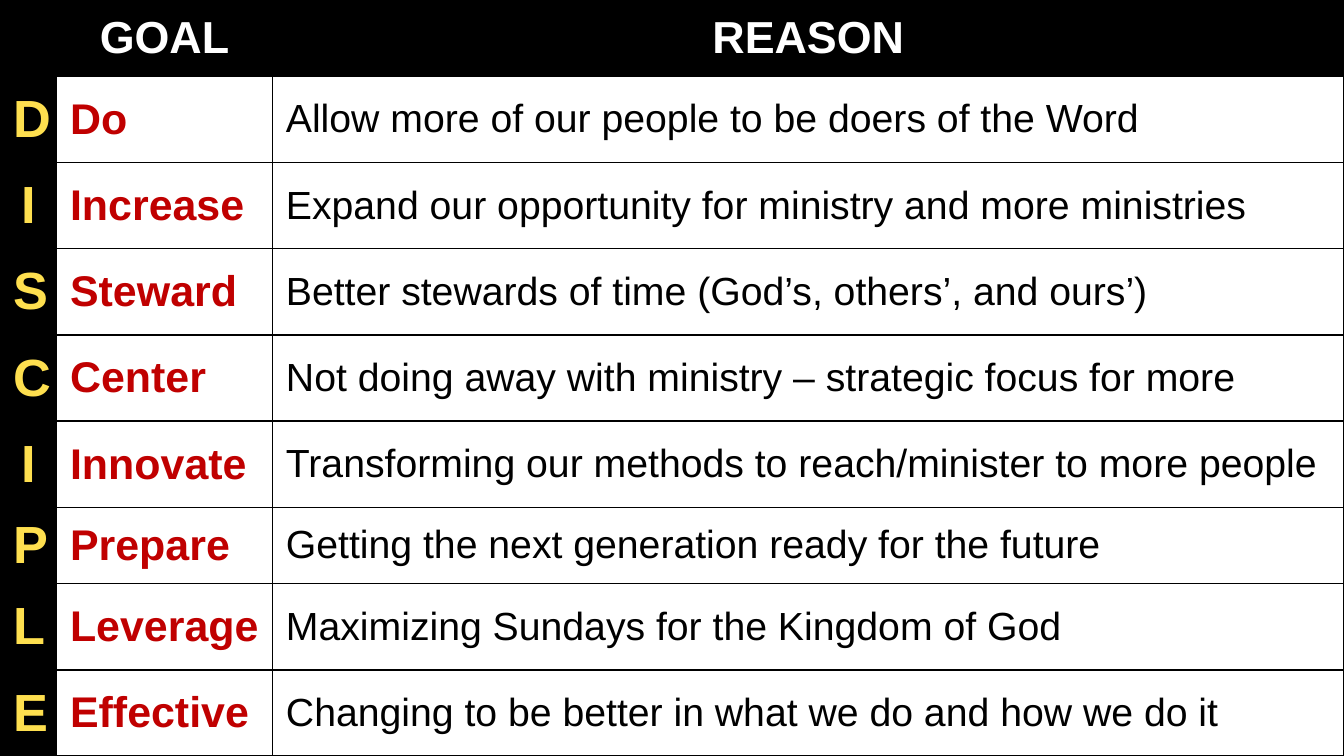
"""Build the DISCIPLE goals and reasons table slide."""
import pptx
import pptx.dml.color
import pptx.enum.text
import pptx.oxml
import pptx.oxml.ns
import pptx.util

Cm = pptx.util.Cm
Pt = pptx.util.Pt
CENTER = pptx.enum.text.PP_ALIGN.CENTER
LEFT = pptx.enum.text.PP_ALIGN.LEFT

BLACK, WHITE, YELLOW, RED = "000000", "FFFFFF", "FEDF4F", "C00000"
HEADER = ("", "GOAL", "REASON")
GOALS = [
    ("D", "Do", "Allow more of our people to be doers of the Word"),
    ("I", "Increase", "Expand our opportunity for ministry and more ministries"),
    ("S", "Steward", "Better stewards of time (God’s, others’, and ours’)"),
    ("C", "Center", "Not doing away with ministry – strategic focus for more"),
    ("I", "Innovate", "Transforming our methods to reach/minister to more people"),
    ("P", "Prepare", "Getting the next generation ready for the future"),
    ("L", "Leverage", "Maximizing Sundays for the Kingdom of God"),
    ("E", "Effective", "Changing to be better in what we do and how we do it"),
]
COLUMN_WIDTHS = (1.07, 4.08, 20.25)
TALL_ROW, SHORT_ROW = 1.63, 1.44
SHORT_ROWS = (0, 6)
HEADER_STYLE = dict(size=24, color=WHITE, bold=True, alignment=CENTER, fill=BLACK)
COLUMN_STYLES = (
    dict(size=28, color=YELLOW, bold=True, alignment=CENTER, fill=BLACK),
    dict(size=23, color=RED, bold=True, alignment=LEFT, fill=None),
    dict(size=21, color=BLACK, bold=False, alignment=LEFT, fill=None),
)


def rgb(value):
    return pptx.dml.color.RGBColor.from_string(value)


def add_borders(cell, color, width):
    properties = cell._tc.get_or_add_tcPr()
    for side in ("lnL", "lnR", "lnT", "lnB"):
        properties.append(pptx.oxml.parse_xml(
            f'<a:{side} {pptx.oxml.ns.nsdecls("a")} w="{Pt(width)}">'
            f'<a:solidFill><a:srgbClr val="{color}"/></a:solidFill></a:{side}>'))


def fill_cell(cell, text, size, color, bold, alignment, fill):
    add_borders(cell, BLACK, 1)
    if fill:
        cell.fill.solid()
        cell.fill.fore_color.rgb = rgb(fill)
    else:
        cell.fill.background()
    cell.vertical_anchor = pptx.enum.text.MSO_ANCHOR.MIDDLE
    paragraph = cell.text_frame.paragraphs[0]
    paragraph.alignment = alignment
    if text:
        run = paragraph.add_run()
        run.text = text
        run.font.name = "Arial"
        run.font.size = Pt(size)
        run.font.bold = bold
        run.font.color.rgb = rgb(color)


def main():
    presentation = pptx.Presentation()
    presentation.slide_width = Cm(25.4)
    presentation.slide_height = Cm(14.29)
    slide = presentation.slides.add_slide(presentation.slide_layouts[6])

    rows = [HEADER] + GOALS
    table = slide.shapes.add_table(
        len(rows), len(COLUMN_WIDTHS), 0, 0,
        presentation.slide_width, presentation.slide_height).table
    table.first_row = False
    table.horz_banding = False
    for column, width in zip(table.columns, COLUMN_WIDTHS):
        column.width = Cm(width)
    for row_index, texts in enumerate(rows):
        height = SHORT_ROW if row_index in SHORT_ROWS else TALL_ROW
        table.rows[row_index].height = Cm(height)
        for column_index, text in enumerate(texts):
            style = COLUMN_STYLES[column_index] if row_index else HEADER_STYLE
            fill_cell(table.cell(row_index, column_index), text, **style)

    presentation.save("out.pptx")


if __name__ == "__main__":
    main()
